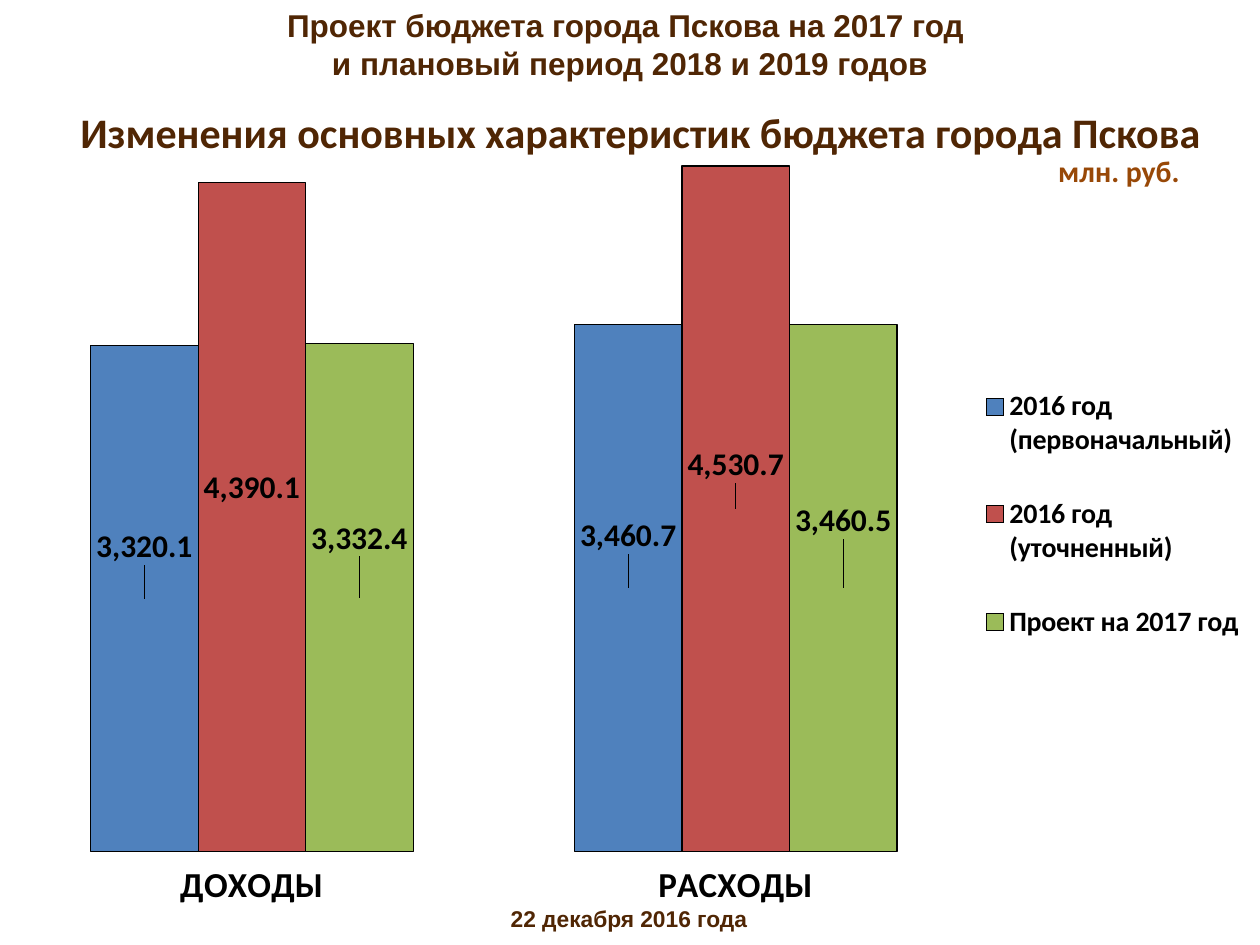
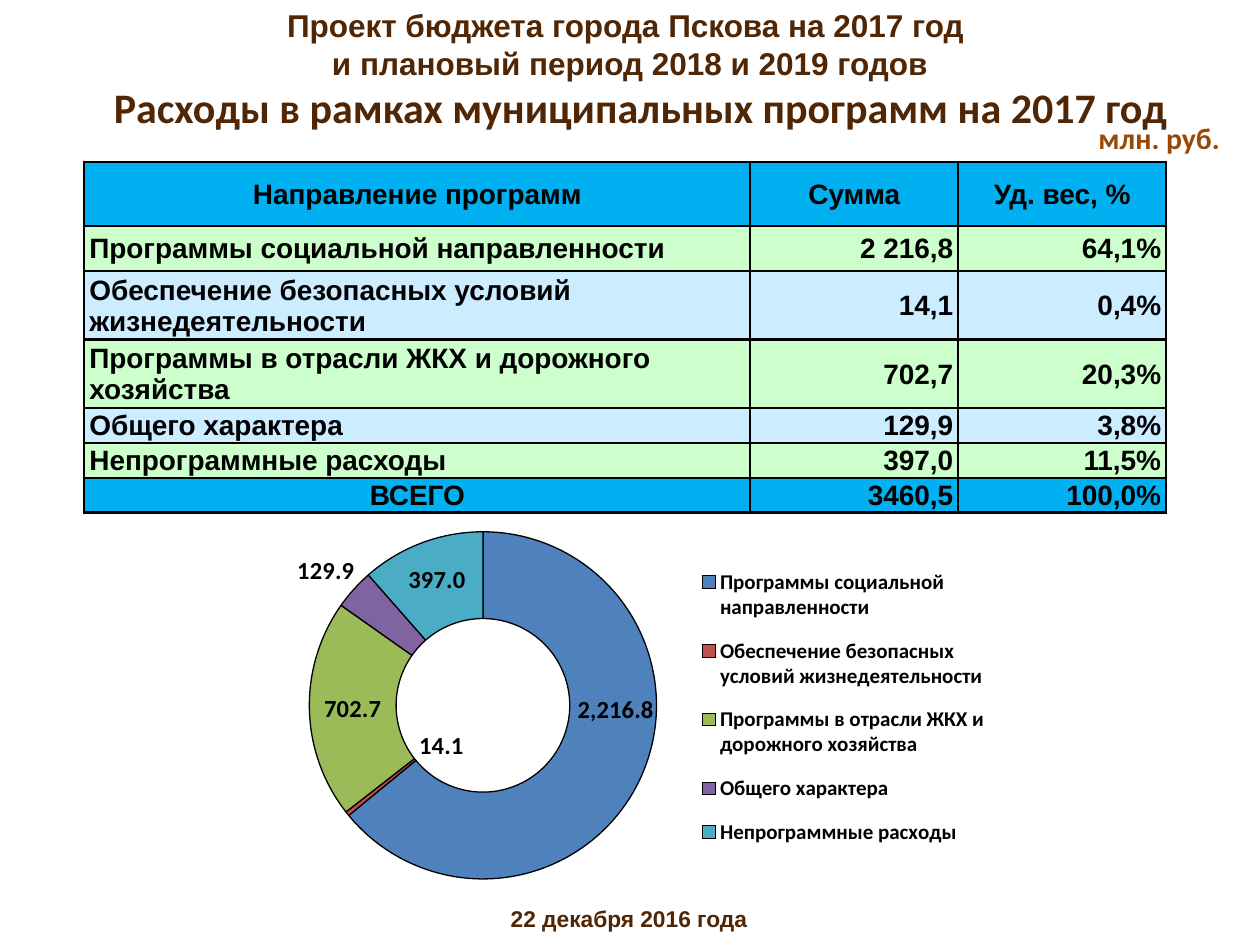
"""Builds two slides on the Pskov city budget: a column chart, and a table with a doughnut chart."""
from lxml import etree
from pptx import Presentation
from pptx import util as u
from pptx.chart import data as chart_data
from pptx.dml import color
from pptx.enum import chart as ch
from pptx.enum import text as t
from pptx.oxml import ns

COLORS = {
    "heading": "502604", "unit": "984807", "ink": "000000",
    "header": "00B0F0", "green_row": "CCFFCC", "blue_row": "CCECFF",
    "blue": "4F81BD", "red": "C0504D", "green": "9BBB59",
    "purple": "8064A2", "teal": "4BACC6",
}
RGB = {name: color.RGBColor.from_string(value) for name, value in COLORS.items()}
SERIES_COLORS = ["blue", "red", "green", "purple", "teal"]
LEFT, CENTER, RIGHT = t.PP_ALIGN.LEFT, t.PP_ALIGN.CENTER, t.PP_ALIGN.RIGHT
AMOUNT = "#,##0.0"


def write(frame, content, size=16, font="Arial", tint="ink", align=LEFT):
    """Fill a text frame with one bold paragraph."""
    paragraph = frame.paragraphs[0]
    paragraph.text = content
    paragraph.alignment = align
    for run in paragraph.runs:
        run.font.size = u.Pt(size)
        run.font.name = font
        run.font.bold = True
        run.font.color.rgb = RGB[tint]


def arrange(owner, index, **settings):
    """Give a chart part a manual layout."""
    for old in owner.findall(ns.qn("c:layout")):
        owner.remove(old)
    layout = etree.Element(ns.qn("c:layout"))
    manual = etree.SubElement(layout, ns.qn("c:manualLayout"))
    for tag, value in settings.items():
        etree.SubElement(manual, ns.qn("c:" + tag)).set("val", str(value))
    owner.insert(index, layout)


deck = Presentation()
deck.slide_width, deck.slide_height = u.Pt(720), u.Pt(540)

headline = "Проект бюджета города Пскова на 2017 год \vи плановый период 2018 и 2019 годов"
date = "22 декабря 2016 года"
topics = [
    ("Изменения основных характеристик бюджета города Пскова", (36, 57.6, 660, 36), (597.6, 83.5)),
    ("Расходы в рамках муниципальных программ на 2017 год", (55.4, 43.2, 621.4, 36), (620.6, 64.8)),
]
slides = []
for topic, topic_box, unit_corner in topics:
    slide = deck.slides.add_slide(deck.slide_layouts[6])
    slides.append(slide)
    for content, box, wrap, style in [
        (headline, (0, 0, 720, 51), True, dict(size=18, tint="heading", align=CENTER)),
        (date, (-0.7, 513.4, 720, 23), True, dict(size=13, tint="heading", align=CENTER)),
        (topic, topic_box, False, dict(size=24, font="Calibri", tint="heading", align=CENTER)),
        ("млн. руб.", (*unit_corner, 84.2, 28), False, dict(size=17, font="Calibri", tint="unit")),
    ]:
        frame = slide.shapes.add_textbox(*map(u.Pt, box)).text_frame
        frame.word_wrap = wrap
        frame.auto_size = t.MSO_AUTO_SIZE.SHAPE_TO_FIT_TEXT
        write(frame, content, **style)
budget_slide, programs_slide = slides

programs = [
    ("Программы социальной направленности", "2 216,8", "64,1%", 2216.8),
    ("Обеспечение безопасных условий жизнедеятельности", "14,1", "0,4%", 14.1),
    ("Программы в отрасли ЖКХ и дорожного хозяйства", "702,7", "20,3%", 702.7),
    ("Общего характера", "129,9", "3,8%", 129.9),
    ("Непрограммные расходы", "397,0", "11,5%", 397),
]
rows = [
    ("Направление программ", "Сумма", "Уд. вес, %"),
    *[program[:3] for program in programs],
    ("ВСЕГО", "3460,5", "100,0%"),
]
row_heights = [36.7, 25.9, 36.7, 36.7, 18.7, 18.7, 18.7]
table = programs_slide.shapes.add_table(
    len(rows), 3, u.Pt(48.2), u.Pt(92.4), u.Pt(618), u.Pt(201)).table
for column, width in zip(table.columns, [380.6, 118.8, 118.8]):
    column.width = u.Pt(width)
last = len(rows) - 1
for r, (row, height) in enumerate(zip(rows, row_heights)):
    table.rows[r].height = u.Pt(height)
    band = "header" if r in (0, last) else "green_row" if r % 2 else "blue_row"
    for c, content in enumerate(row):
        cell = table.cell(r, c)
        cell.margin_left = cell.margin_right = u.Pt(2.9)
        cell.margin_top, cell.margin_bottom = u.Pt(0.7), 0
        cell.vertical_anchor = t.MSO_ANCHOR.MIDDLE
        if r == 0 or (r == last and c == 0):
            align = CENTER
        else:
            align = RIGHT if c else LEFT
        write(cell.text_frame, content, align=align)
        borders = cell._tc.get_or_add_tcPr()
        for side in ("lnL", "lnR", "lnT", "lnB"):
            edge = etree.SubElement(borders, ns.qn("a:" + side), w=str(u.Pt(1.5)))
            fill = etree.SubElement(edge, ns.qn("a:solidFill"))
            etree.SubElement(fill, ns.qn("a:srgbClr"), val=COLORS["ink"])
        cell.fill.solid()
        cell.fill.fore_color.rgb = RGB[band]

budget = chart_data.CategoryChartData(number_format=AMOUNT)
budget.categories = ["ДОХОДЫ", "РАСХОДЫ"]
budget.add_series("2016 год (первоначальный)", [3320.1, 3460.7])
budget.add_series("2016 год (уточненный)", [4390.1, 4530.7])
budget.add_series("Проект на 2017 год", [3332.4, 3460.5])

shares = chart_data.CategoryChartData(number_format=AMOUNT)
shares.categories = [program[0] for program in programs]
shares.add_series("Расходы", [program[3] for program in programs])

charts = []
for slide, kind, box, figures, legend_size, label_size, plot_area, legend_area, shifts in [
    (budget_slide, ch.XL_CHART_TYPE.COLUMN_CLUSTERED, (0, 93.6, 720, 426.2), budget, 16, 18,
     dict(x=0.008, y=0.003, w=0.768, h=0.919), dict(x=0.772, y=0.25, w=0.222, h=0.44),
     [(0, -0.07), (0, -0.07), (0, -0.04), (0, -0.06), (0, -0.08), (0, -0.09)]),
    (programs_slide, ch.XL_CHART_TYPE.DOUGHNUT, (144, 298, 430.6, 210.2), shares, 12, 14,
     dict(x=0.076, y=0.028, w=0.461, h=0.944), dict(x=0.585, y=0.08, w=0.4, h=0.85),
     [(0.02, -0.14), (0.08, -0.11), (0, 0), (-0.08, -0.13), (0, -0.01)]),
]:
    chart = slide.shapes.add_chart(kind, *map(u.Pt, box), figures).chart
    charts.append(chart)
    chart.has_title = False
    chart.font.name, chart.font.size = "Calibri", u.Pt(10)
    chart.font.color.rgb = RGB["ink"]
    chart.has_legend = True
    chart.legend.position = ch.XL_LEGEND_POSITION.RIGHT
    chart.legend.include_in_layout = False
    chart.legend.font.size, chart.legend.font.bold = u.Pt(legend_size), True
    is_column = kind == ch.XL_CHART_TYPE.COLUMN_CLUSTERED
    chart.plots[0].vary_by_categories = not is_column
    for s, series in enumerate(chart.series):
        labels = series.data_labels
        labels.show_value = True
        labels.number_format, labels.number_format_is_linked = AMOUNT, False
        labels.font.size, labels.font.bold = u.Pt(label_size), True
        parts = [series.points[i] for i in range(len(series.values))]
        for p, part in enumerate(parts):
            label = part.data_label
            label.font.size, label.font.bold = u.Pt(label_size), True
            if is_column:
                label.position = ch.XL_LABEL_POSITION.CENTER
        for i, part in enumerate([series] if is_column else parts):
            part.format.fill.solid()
            part.format.fill.fore_color.rgb = RGB[SERIES_COLORS[s + i]]
            part.format.line.color.rgb = RGB["ink"]
            part.format.line.width = u.Pt(0.75)
    arrange(chart.element.xpath(".//c:plotArea")[0], 0, layoutTarget="inner",
            xMode="edge", yMode="edge", **plot_area)
    arrange(chart.element.xpath(".//c:legend")[0], 1, xMode="edge", yMode="edge", **legend_area)
    for label, (dx, dy) in zip(chart.element.xpath(".//c:dLbl"), shifts):
        arrange(label, 1, x=dx, y=dy)

columns = charts[0]
columns.plots[0].gap_width, columns.plots[0].overlap = 150, 0
columns.value_axis.visible = False
columns.value_axis.has_major_gridlines = False
columns.value_axis.minimum_scale, columns.value_axis.maximum_scale = 0, 4500
directions = columns.category_axis
directions.major_tick_mark = ch.XL_TICK_MARK.CROSS
directions.tick_labels.font.size, directions.tick_labels.font.bold = u.Pt(20), True
directions.format.line.fill.background()

deck.save("out.pptx")
